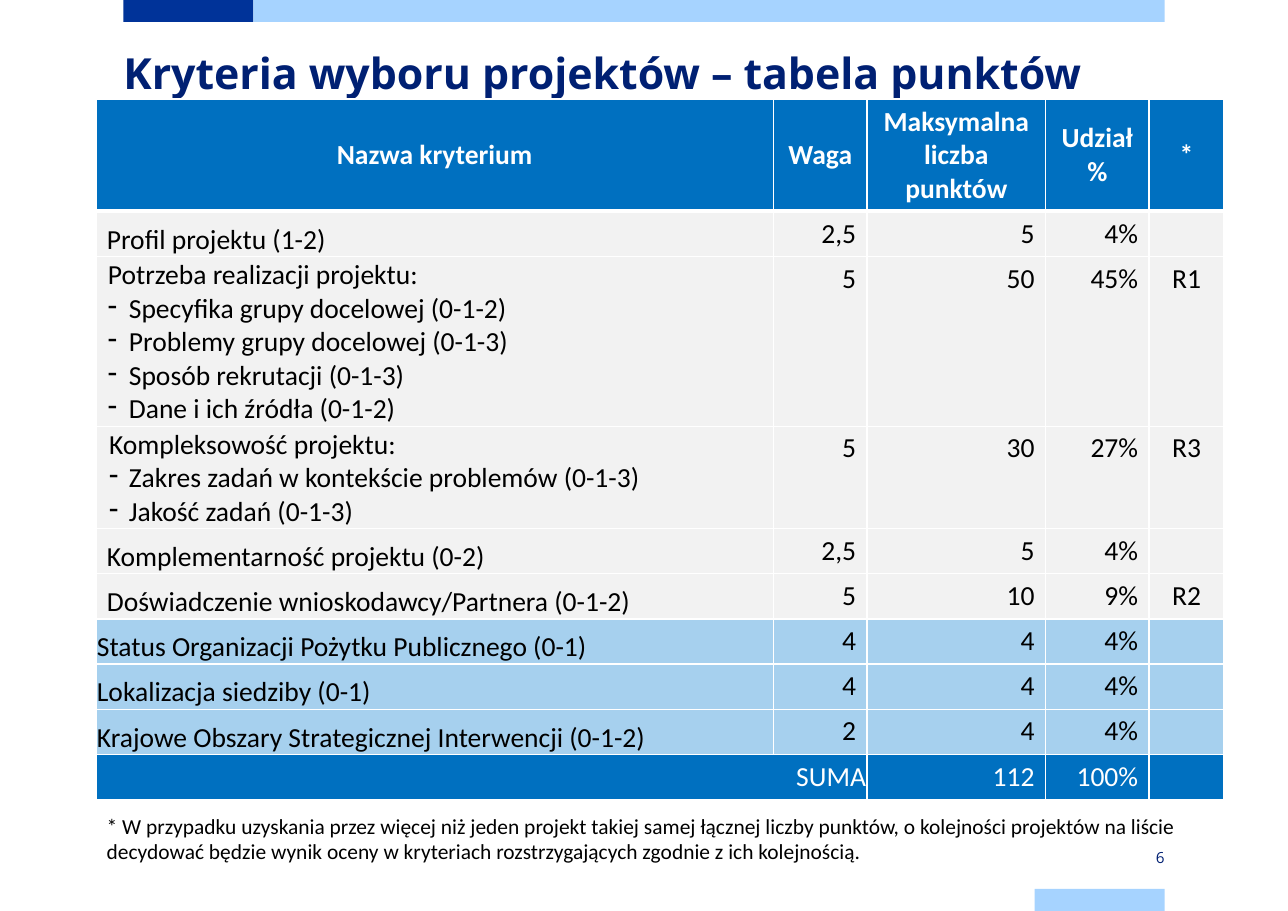
from dataclasses import dataclass

import lxml.etree
import pptx
import pptx.dml.color
import pptx.enum.shapes
import pptx.enum.text
import pptx.oxml.ns
import pptx.util

Inches = pptx.util.Inches
Pt = pptx.util.Pt
ALIGN = pptx.enum.text.PP_ALIGN
ANCHOR = pptx.enum.text.MSO_ANCHOR

NAVY = "002073"
BLUE = "0070C0"
GREY = "F2F2F2"
SKY = "A6D0EE"
PALE = "A6D3FF"
WHITE = "FFFFFF"
BLACK = "000000"


@dataclass
class Bar:
    left: float
    top: float
    width: float
    color: str


@dataclass
class Criterion:
    name: str
    values: tuple[str, str, str, str]
    fill: str = GREY
    indent: float = 0.09
    details: tuple[str, ...] = ()
    height: float = 0.41


BARS = [
    Bar(1.12, 0, 1.18, "003399"),
    Bar(2.3, 0, 8.27, PALE),
    Bar(9.39, 8.07, 1.18, PALE),
]
HEADERS = ["Nazwa kryterium", "Waga", "Maksymalna liczba punktów", "Udział %", "*"]
COLUMN_WIDTHS = [6.15, 0.85, 1.62, 0.94, 0.68]
HEADER_HEIGHT = 1.02
CRITERIA = [
    Criterion("Profil projektu (1-2)", ("2,5", "5", "4%", "")),
    Criterion("Potrzeba realizacji projektu:", ("5", "50", "45%", "R1"), indent=0.1, height=1.54,
              details=("Specyfika grupy docelowej (0-1-2)", "Problemy grupy docelowej (0-1-3)",
                       "Sposób rekrutacji (0-1-3)", "Dane i ich źródła (0-1-2)")),
    Criterion("Kompleksowość projektu:", ("5", "30", "27%", "R3"), indent=0.11, height=0.93,
              details=("Zakres zadań w kontekście problemów (0-1-3)", "Jakość zadań (0-1-3)")),
    Criterion("Komplementarność projektu (0-2)", ("2,5", "5", "4%", "")),
    Criterion("Doświadczenie wnioskodawcy/Partnera (0-1-2)", ("5", "10", "9%", "R2")),
    Criterion("Status Organizacji Pożytku Publicznego (0-1)", ("4", "4", "4%", ""), SKY, 0),
    Criterion("Lokalizacja siedziby (0-1)", ("4", "4", "4%", ""), SKY, 0),
    Criterion("Krajowe Obszary Strategicznej Interwencji (0-1-2)", ("2", "4", "4%", ""), SKY, 0),
]
TOTALS = ["SUMA", "", "112", "100%", ""]
FOOTNOTE = (
    "* W przypadku uzyskania przez więcej niż jeden projekt takiej samej łącznej liczby punktów, "
    "o kolejności projektów na liście decydować będzie wynik oceny w kryteriach rozstrzygających "
    "zgodnie z ich kolejnością."
)


def rgb(color: str) -> pptx.dml.color.RGBColor:
    return pptx.dml.color.RGBColor.from_string(color)


def set_font(paragraph, name: str, size: float, color: str, bold: bool = False) -> None:
    font = paragraph.font
    font.name, font.size, font.bold = name, Pt(size), bold
    font.color.rgb = rgb(color)


def set_margins(frame, left: float, top: float, right: float, bottom: float) -> None:
    frame.margin_left, frame.margin_top = Inches(left), Inches(top)
    frame.margin_right, frame.margin_bottom = Inches(right), Inches(bottom)


def set_indent(paragraph, left: float, hanging: float = 0, bullet: str = "") -> None:
    properties = paragraph._p.get_or_add_pPr()
    properties.set("marL", str(Inches(left)))
    properties.set("indent", str(-Inches(hanging)))
    if bullet:
        mark = lxml.etree.SubElement(properties, pptx.oxml.ns.qn("a:buChar"))
        mark.set("char", bullet)


def set_borders(cell, top: float, bottom: float) -> None:
    properties = cell._tc.get_or_add_tcPr()
    for side, width in (("L", 1), ("R", 1), ("T", top), ("B", bottom)):
        line = lxml.etree.SubElement(properties, pptx.oxml.ns.qn(f"a:ln{side}"), w=str(Pt(width)))
        fill = lxml.etree.SubElement(line, pptx.oxml.ns.qn("a:solidFill"))
        lxml.etree.SubElement(fill, pptx.oxml.ns.qn("a:srgbClr"), val=WHITE)


def fill_cell(cell, text: str, fill: str, color: str, align, anchor,
              bold: bool = False, top: float = 1, bottom: float = 1) -> None:
    set_borders(cell, top, bottom)
    cell.fill.solid()
    cell.fill.fore_color.rgb = rgb(fill)
    cell.vertical_anchor = anchor
    cell.text = text
    for paragraph in cell.text_frame.paragraphs:
        paragraph.alignment = align
        set_font(paragraph, "Calibri", 18, color, bold)


def add_bar(page, bar: Bar) -> None:
    shape = page.shapes.add_shape(
        pptx.enum.shapes.MSO_SHAPE.RECTANGLE,
        Inches(bar.left), Inches(bar.top), Inches(bar.width), Inches(0.2))
    shape.shadow.inherit = False
    shape.fill.solid()
    shape.fill.fore_color.rgb = rgb(bar.color)
    shape.line.fill.background()


def add_text(page, text: str, left: float, top: float, width: float, height: float):
    box = page.shapes.add_textbox(Inches(left), Inches(top), Inches(width), Inches(height))
    box.text_frame.word_wrap = True
    box.text_frame.text = text
    return box.text_frame


def add_title(page, text: str) -> None:
    title = page.shapes.title
    title.left, title.top = Inches(1.12), Inches(0.39)
    title.width, title.height = Inches(9.45), Inches(0.71)
    frame = title.text_frame
    frame.text = text
    frame.auto_size = pptx.enum.text.MSO_AUTO_SIZE.NONE
    frame.vertical_anchor = ANCHOR.TOP
    set_margins(frame, 0, 0, 0, 0)
    paragraph = frame.paragraphs[0]
    paragraph.alignment = ALIGN.LEFT
    paragraph.line_spacing = Pt(36)
    set_font(paragraph, "Open Sans", 28, NAVY, True)


def fill_criterion(table, row: int, criterion: Criterion) -> None:
    top = 3 if row == 1 else 1
    name_cell = table.cell(row, 0)
    set_margins(name_cell, 0.01, 0.01, 0.01, 0)
    fill_cell(name_cell, "\n".join((criterion.name, *criterion.details)),
              criterion.fill, BLACK, ALIGN.LEFT, ANCHOR.BOTTOM, top=top)
    for number, paragraph in enumerate(name_cell.text_frame.paragraphs):
        if number:
            paragraph._p.pPr.remove(paragraph._p.pPr.defRPr)
            set_indent(paragraph, 0.29, 0.29 - criterion.indent, "-")
            set_font(paragraph, "Calibri", 18, BLACK)
        else:
            set_indent(paragraph, criterion.indent)
    for column, value in enumerate(criterion.values, 1):
        align = ALIGN.CENTER if column == 4 else ALIGN.RIGHT
        fill_cell(table.cell(row, column), value, criterion.fill, BLACK, align, ANCHOR.TOP, top=top)


def add_criteria_table(page) -> None:
    heights = [HEADER_HEIGHT, *(criterion.height for criterion in CRITERIA), 0.41]
    table = page.shapes.add_table(
        len(heights), len(HEADERS), Inches(0.87), Inches(0.9),
        Inches(sum(COLUMN_WIDTHS)), Inches(sum(heights))).table
    table.horz_banding = False
    for column, width in zip(table.columns, COLUMN_WIDTHS):
        column.width = Inches(width)
    for row, height in zip(table.rows, heights):
        row.height = Inches(height)
    for column, header in enumerate(HEADERS):
        fill_cell(table.cell(0, column), header, BLUE, WHITE, ALIGN.CENTER, ANCHOR.MIDDLE, True, bottom=3)
    for row, criterion in enumerate(CRITERIA, 1):
        fill_criterion(table, row, criterion)
    last = len(heights) - 1
    for column, total in enumerate(TOTALS):
        fill_cell(table.cell(last, column), total, BLUE, WHITE, ALIGN.RIGHT, ANCHOR.MIDDLE)
    set_margins(table.cell(last, 0), 0.01, 0.01, 0.01, 0)
    table.cell(last, 0).merge(table.cell(last, 1))


def main() -> None:
    deck = pptx.Presentation()
    deck.slide_width, deck.slide_height = Inches(11.69), Inches(8.27)
    page = deck.slides.add_slide(deck.slide_layouts[5])
    for bar in BARS:
        add_bar(page, bar)
    number = add_text(page, "6", 9.39, 7.68, 1.18, 0.2)
    set_margins(number, 0, 0.08, 0, 0.08)
    number.vertical_anchor = ANCHOR.MIDDLE
    number.paragraphs[0].alignment = ALIGN.RIGHT
    set_font(number.paragraphs[0], "Open Sans", 10, NAVY)
    add_title(page, "Kryteria wyboru projektów – tabela punktów")
    add_criteria_table(page)
    footnote = add_text(page, FOOTNOTE, 0.87, 7.33, 10.25, 0.57)
    set_font(footnote.paragraphs[0], "Calibri", 14, BLACK)
    deck.save("out.pptx")


if __name__ == "__main__":
    main()
